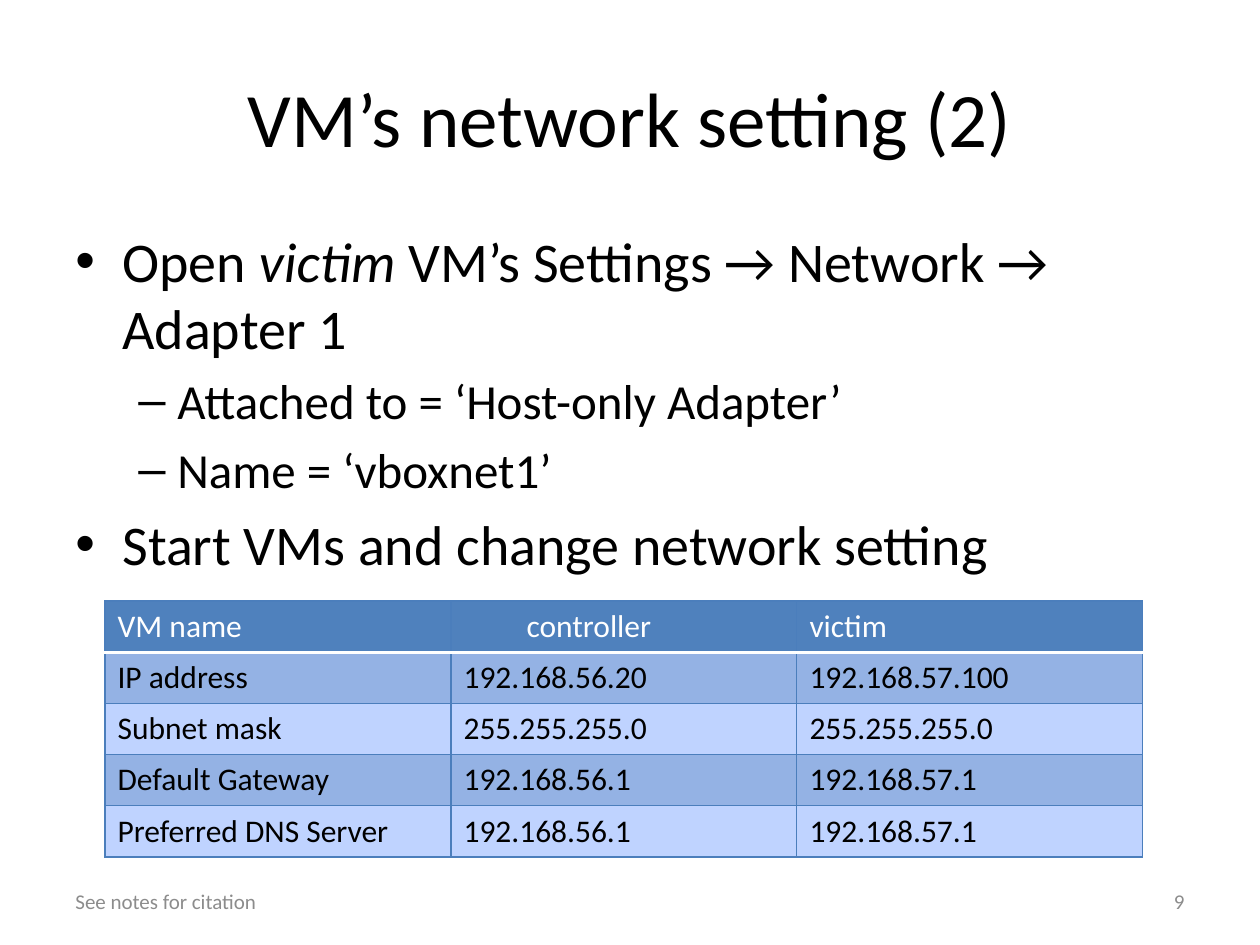
from lxml import etree
from pptx import Presentation
from pptx.dml.color import RGBColor
from pptx.enum.text import MSO_ANCHOR, PP_ALIGN
from pptx.oxml.ns import qn
from pptx.util import Pt

LEFT, CENTER, RIGHT = PP_ALIGN.LEFT, PP_ALIGN.CENTER, PP_ALIGN.RIGHT
TOP, MIDDLE = MSO_ANCHOR.TOP, MSO_ANCHOR.MIDDLE
EMU_PER_PX = 914400 / 126
FONT = "Calibri"
COLORS = {
    "text": "000000",
    "footer": "8C8C8C",
    "header": "4F81BD",
    "header_text": "FFFFFF",
    "band_dark": "94B2E4",
    "band_light": "BFD3FF",
    "border": "4B7EBC",
    "header_line": "FFFFFF",
}
# Bullet, font size, text indent and hanging indent in px, by level
LEVELS = [("•", 32, 47, 47), ("–", 28, 102, 39)]
BULLETS = [
    (0, ["Open ", "victim ", "VM’s Settings → Network → Adapter 1"]),
    (1, ["Attached to = ‘Host-only Adapter’"]),
    (1, ["Name = ‘vboxnet1’"]),
    (0, ["Start VMs and change network setting"]),
]
ITALIC_TEXT = "victim "
NETWORK_ROWS = [
    ["VM name", "\tcontroller", "victim"],
    ["IP address", "192.168.56.20", "192.168.57.100"],
    ["Subnet mask", "255.255.255.0", "255.255.255.0"],
    ["Default Gateway", "192.168.56.1", "192.168.57.1"],
    ["Preferred DNS Server", "192.168.56.1", "192.168.57.1"],
]


def px(length):
    return round(length * EMU_PER_PX)


def style_font(font, size, color):
    font.name = FONT
    font.size = Pt(size)
    font.bold = False
    font.color.rgb = RGBColor.from_string(COLORS[color])


def add_text_frame(slide, box, anchor):
    text_frame = slide.shapes.add_textbox(*map(px, box)).text_frame
    text_frame.word_wrap = True
    text_frame.vertical_anchor = anchor
    return text_frame


def add_line(slide, box, text, size, color, alignment):
    """A single line of text, centred vertically in its box."""
    text_frame = add_text_frame(slide, box, MIDDLE)
    text_frame.text = text
    paragraph = text_frame.paragraphs[0]
    paragraph.alignment = alignment
    style_font(paragraph.runs[0].font, size, color)


def add_bullets(slide, box):
    text_frame = add_text_frame(slide, box, TOP)
    for index, (level, parts) in enumerate(BULLETS):
        paragraph = text_frame.add_paragraph() if index else text_frame.paragraphs[0]
        bullet, size, indent, hanging = LEVELS[level]
        paragraph.level = level
        paragraph.space_before = Pt(size * 0.2)
        for part in parts:
            run = paragraph.add_run()
            run.text = part
            style_font(run.font, size, "text")
            run.font.italic = part == ITALIC_TEXT
        properties = paragraph._p.get_or_add_pPr()
        properties.set("marL", str(px(indent)))
        properties.set("indent", str(-px(hanging)))
        etree.SubElement(properties, qn("a:buFont"), typeface="Arial")
        etree.SubElement(properties, qn("a:buChar"), char=bullet)


def set_borders(cell, borders):
    """Draw the four sides, given as (colour, points) for left, right, top, bottom."""
    properties = cell._tc.get_or_add_tcPr()
    for index, (side, (color, width)) in enumerate(zip("LRTB", borders)):
        line = etree.Element(qn(f"a:ln{side}"), w=str(Pt(width)))
        fill = etree.SubElement(line, qn("a:solidFill"))
        etree.SubElement(fill, qn("a:srgbClr"), val=COLORS[color])
        properties.insert(index, line)


def add_network_table(slide, box):
    row_count, column_count = len(NETWORK_ROWS), len(NETWORK_ROWS[0])
    table = slide.shapes.add_table(row_count, column_count, *map(px, box)).table
    table.first_row = table.horz_banding = False
    thin, thick = ("border", 0.75), ("header_line", 2)
    for row, texts in enumerate(NETWORK_ROWS):
        band = "band_dark" if row % 2 else "band_light"
        for column, text in enumerate(texts):
            cell = table.cell(row, column)
            cell.text = text
            style_font(cell.text_frame.paragraphs[0].runs[0].font, 18,
                       "text" if row else "header_text")
            cell.fill.solid()
            cell.fill.fore_color.rgb = RGBColor.from_string(
                COLORS[band if row else "header"])
            set_borders(cell, [thin, thin, thick if row == 1 else thin,
                               thin if row else thick])


def build_network_slide(presentation):
    slide = presentation.slides.add_slide(presentation.slide_layouts[6])
    # Title and bullets
    add_line(slide, (63, 38, 1134, 157), "VM’s network setting (2)", 44, "text", CENTER)
    add_bullets(slide, (63, 220, 1134, 624))
    # Footer and slide number
    add_line(slide, (63, 876, 294, 50), "See notes for citation", 12, "footer", LEFT)
    add_line(slide, (903, 876, 294, 50), "9", 12, "footer", RIGHT)
    # Network settings of both machines
    add_network_table(slide, (105, 601, 1038, 256))


def main():
    presentation = Presentation()
    presentation.slide_width = px(1260)
    presentation.slide_height = px(945)
    build_network_slide(presentation)
    presentation.save("out.pptx")


if __name__ == "__main__":
    main()
